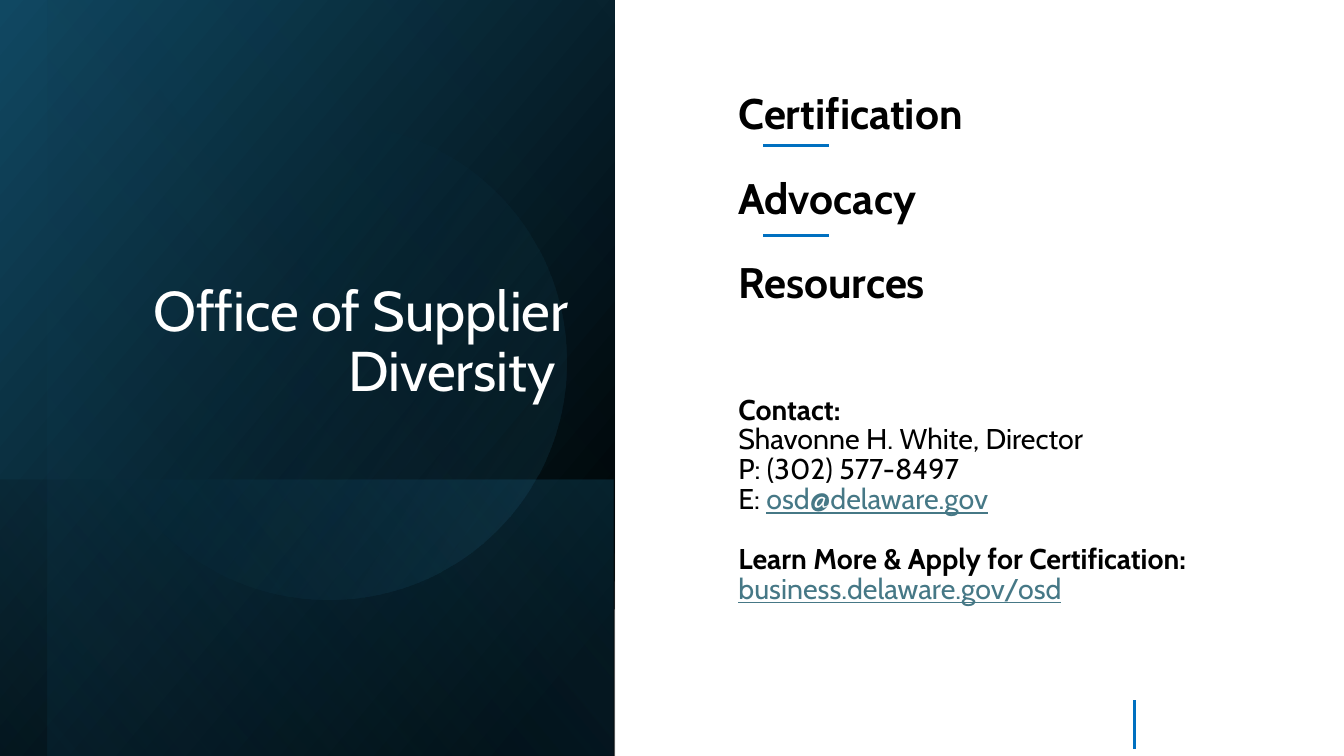
import pptx
import pptx.util
import pptx.dml.color
import pptx.enum.shapes
import pptx.enum.text
import pptx.oxml
import pptx.oxml.ns
from pptx.util import Cm

HEADLINE = "Office of Supplier Diversity "
SERVICES = ["Certification", "Advocacy", "Resources"]
CONTACT = [
    [("Contact:", "label")],
    [("Shavonne H. White, Director", "plain")],
    [("P: (302) 577-8497", "plain")],
    [("E: ", "plain"), ("osd@delaware.gov", "address")],
]
LEARN_MORE = [
    [("Learn More & Apply for Certification:", "label")],
    [("business.delaware.gov/osd", "address")],
]
COLORS = {
    "black": "000000", "white": "FFFFFF", "navy": "104862", "teal": "156082",
    "sky": "46B1E1", "address": "467886", "accent": "0070C0",
}
STYLES = {
    "service": dict(size=30.5, bold=True),
    "label": dict(size=20.4, bold=True),
    "plain": dict(size=20.4),
    "address": dict(size=20.4, color="address", underline=True),
}
RECT = pptx.enum.shapes.MSO_SHAPE.RECTANGLE
OVAL = pptx.enum.shapes.MSO_SHAPE.OVAL
PANELS = [
    (RECT, (-1.78, 1.78, 19.05, 15.49), 90, True, 50,
     [(8, "black", 100), (100, "navy", 100)]),
    (RECT, (4.24, 7.82, 6.96, 15.49), 90, True, 130,
     [(2, "teal", 29), (100, "black", 30)]),
    (RECT, (-1.17, 2.36, 19.05, 14.3), 90, True, 130,
     [(0, "black", 0), (99, "teal", 11)]),
    (OVAL, (2.29, 3.12, 11.99, 11.99), 101.6, False, 290,
     [(39, "teal", 0), (100, "sky", 15)]),
]
RULES = [
    (19.23, 3.66, 20.88, 3.66),
    (19.23, 5.94, 20.88, 5.94),
    (28.6, 17.65, 28.6, 18.87),
]
SERVICE_LINE, SERVICE_GAP = 26, 34.3
DETAIL_LINE, CONTACT_GAP, LEARN_GAP = 21.4, 63.3, 21.1


def add_text(paragraph, text, size, color="black", bold=False, underline=False):
    run = paragraph.add_run()
    run.text = text
    run.font.name = "Cabin"
    run.font.size = pptx.util.Pt(size)
    run.font.bold = bold
    run.font.underline = underline
    run.font.color.rgb = pptx.dml.color.RGBColor.from_string(COLORS[color])


def add_panel(slide, kind, box, rotation, flipped, angle, stops):
    panel = slide.shapes.add_shape(kind, *map(Cm, box))
    panel.rotation = rotation
    panel.shadow.inherit = False
    panel.line.fill.background()
    properties = panel._element.spPr
    if flipped:
        properties.xfrm.set("flipH", "1")
    stop_xml = "".join(
        f'<a:gs pos="{position * 1000}"><a:srgbClr val="{COLORS[color]}">'
        f'<a:alpha val="{opacity * 1000}"/></a:srgbClr></a:gs>'
        for position, color, opacity in stops)
    gradient = pptx.oxml.parse_xml(
        f'<a:gradFill {pptx.oxml.ns.nsdecls("a")} rotWithShape="1">'
        f'<a:gsLst>{stop_xml}</a:gsLst>'
        f'<a:lin ang="{angle * 60000}" scaled="0"/></a:gradFill>')
    properties.find(pptx.oxml.ns.qn("a:prstGeom")).addnext(gradient)


def add_rule(slide, ends):
    rule = slide.shapes.add_connector(
        pptx.enum.shapes.MSO_CONNECTOR.STRAIGHT, *map(Cm, ends))
    rule.line.width = pptx.util.Pt(2.25)
    rule.line.color.rgb = pptx.dml.color.RGBColor.from_string(COLORS["accent"])
    rule._element.spPr.append(
        pptx.oxml.parse_xml(f'<a:effectLst {pptx.oxml.ns.nsdecls("a")}/>'))


def place_headline(slide):
    headline = slide.shapes.title
    headline.left, headline.top = Cm(1.14), Cm(0.91)
    headline.width, headline.height = Cm(13.44), Cm(9.4)
    frame = headline.text_frame
    frame.word_wrap = True
    frame.auto_size = pptx.enum.text.MSO_AUTO_SIZE.NONE
    frame.vertical_anchor = pptx.enum.text.MSO_ANCHOR.BOTTOM
    paragraph = frame.paragraphs[0]
    paragraph.alignment = pptx.enum.text.PP_ALIGN.RIGHT
    paragraph.line_spacing = 0.9
    add_text(paragraph, HEADLINE, size=40, color="white")


def place_details(slide):
    details = slide.shapes.add_textbox(Cm(18.36), Cm(2.26), Cm(14.58), Cm(15.8))
    frame = details.text_frame
    frame.word_wrap = True
    frame.margin_top = Cm(0.31)
    services = [[(service, "service")] for service in SERVICES]
    groups = [
        (services, SERVICE_LINE, 0, SERVICE_GAP),
        (CONTACT, DETAIL_LINE, CONTACT_GAP, 0),
        (LEARN_MORE, DETAIL_LINE, LEARN_GAP, 0),
    ]
    paragraph = frame.paragraphs[0]
    for lines, height, first_gap, gap in groups:
        for index, line in enumerate(lines):
            if paragraph.runs:
                paragraph = frame.add_paragraph()
            paragraph.line_spacing = pptx.util.Pt(height)
            paragraph.space_before = pptx.util.Pt(gap if index else first_gap)
            for text, style in line:
                add_text(paragraph, text, **STYLES[style])


def main():
    deck = pptx.Presentation()
    deck.slide_width, deck.slide_height = Cm(33.87), Cm(19.05)
    slide = deck.slides.add_slide(deck.slide_layouts.get_by_name("Title Only"))
    for panel in PANELS:
        add_panel(slide, *panel)
    headline = slide.shapes.title._element
    headline.getparent().append(headline)
    place_headline(slide)
    place_details(slide)
    for ends in RULES:
        add_rule(slide, ends)
    deck.save("out.pptx")


if __name__ == "__main__":
    main()
